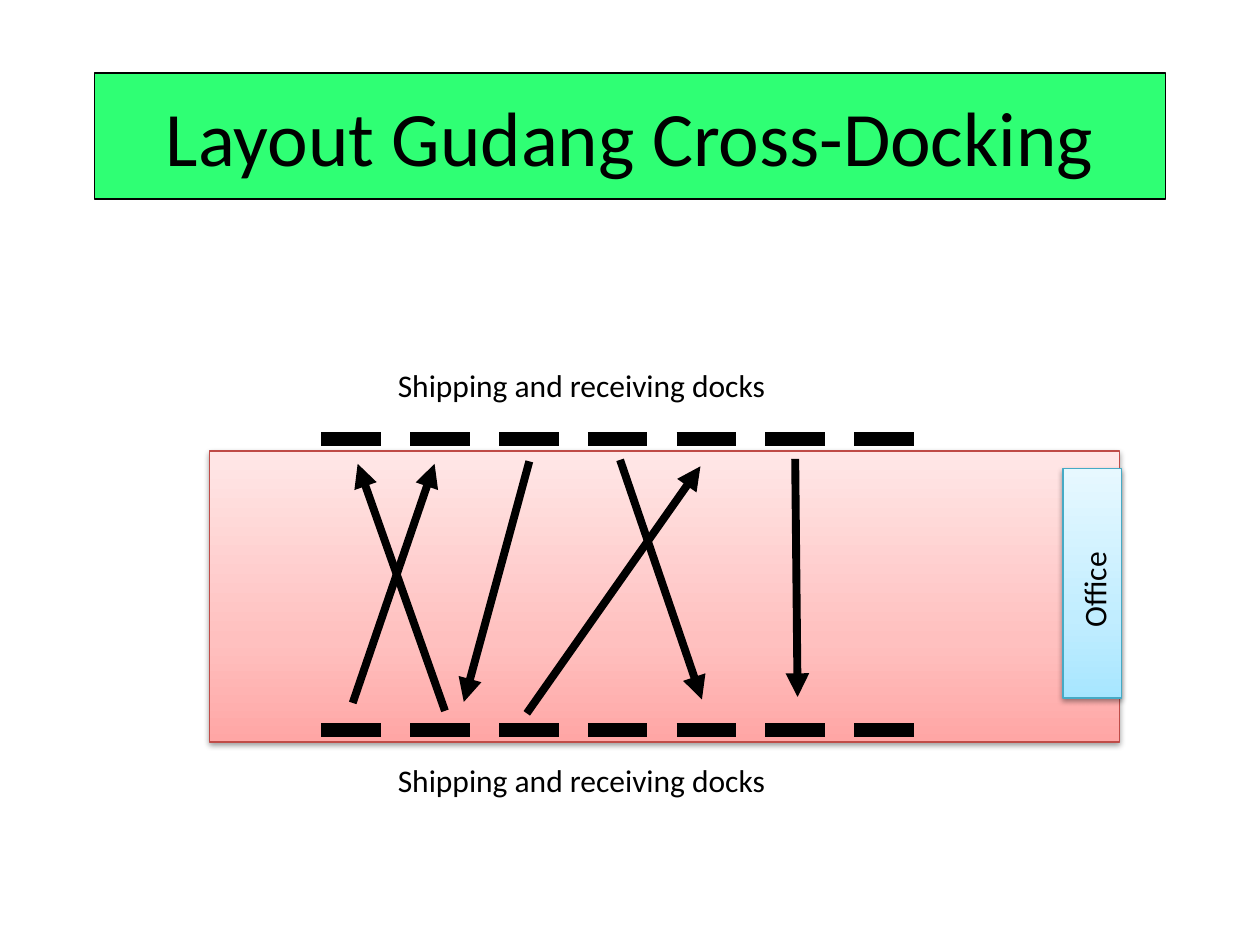
"""Draw the cross-docking warehouse layout slide."""
from lxml import etree
from pptx import Presentation
from pptx import util as u
from pptx.dml.color import RGBColor
from pptx.enum import shapes, text
from pptx.oxml import parse_xml
from pptx.oxml.ns import qn

FONT = "Calibri"
INK = "000000"
TITLE = ("Layout Gudang Cross-Docking", (1.9, 1.47, 21.6, 2.54), "2FFF74")
AREAS = [
    ((4.23, 9.09, 18.34, 5.87), "BF4C48", ("FFA6A5", "FFC0BF", "FFE7E7")),
    ((21.43, 9.45, 1.18, 4.62), "46AAC5", ("A7E6FF", "C1EDFF", "E7F8FF")),
]
STOPS = (0, 35, 100)
LABELS = [
    ("Shipping and receiving docks", (7.77, 7.26, 9.5, 1.02), 0),
    ("Shipping and receiving docks", (7.77, 15.21, 9.5, 1.02), 0),
    ("Office", (20.9, 11.23, 2.31, 1.02), 270),
]
DOCKS = {"rows": (8.84, 14.71), "count": 7, "left": 6.48, "step": 1.79, "long": 1.2}
FLOWS = [
    ((7.11, 14.17), (8.76, 9.35)),
    ((8.97, 14.33), (7.21, 9.35)),
    ((10.62, 14.38), (14.12, 9.4)),
    ((16.03, 9.25), (16.08, 14.05)),
    ((12.5, 9.27), (14.15, 14.1)),
    ((10.67, 9.3), (9.35, 14.15)),
]


def cms(nums):
    return [u.Cm(n) for n in nums]


def tint(part, code):
    part.solid()
    part.fore_color.rgb = RGBColor.from_string(code)


def edge(shape, code, width):
    tint(shape.line.fill, code)
    shape.line.width = u.Pt(width)


def write(shape, words, size, align):
    frame = shape.text_frame
    frame.text = words
    frame.word_wrap = True
    para = frame.paragraphs[0]
    para.alignment = align
    font = para.runs[0].font
    font.name, font.size = FONT, u.Pt(size)
    tint(font.fill, INK)
    return frame


def shade(shape, codes):
    shape.fill.gradient()
    grad = shape._element.spPr.find(qn("a:gradFill"))
    stops = grad.find(qn("a:gsLst"))
    for old in list(stops):
        stops.remove(old)
    for pos, code in zip(STOPS, codes):
        stop = etree.SubElement(stops, qn("a:gs"), pos=str(pos * 1000))
        etree.SubElement(stop, qn("a:srgbClr"), val=code)
    shape.fill.gradient_angle = 90


def lift(shape):
    shape.shadow.inherit = False
    effect = shape._element.spPr.find(qn("a:effectLst"))
    effect.append(parse_xml(
        '<a:outerShdw xmlns:a="http://schemas.openxmlformats.org/drawingml/2006/main"'
        ' blurRad="40000" dist="20000" dir="5400000" rotWithShape="0">'
        f'<a:srgbClr val="{INK}"><a:alpha val="38000"/></a:srgbClr></a:outerShdw>'))


def stroke(slide, start, end, width, head=False):
    line = slide.shapes.add_connector(
        shapes.MSO_CONNECTOR.STRAIGHT, *cms(start + end))
    edge(line, INK, width)
    if head:
        etree.SubElement(line.line._get_or_add_ln(), qn("a:tailEnd"), type="triangle")
    etree.SubElement(line._element.spPr, qn("a:effectLst"))


def main():
    deck = Presentation()
    deck.slide_width, deck.slide_height = cms((25.4, 19.05))
    slide = deck.slides.add_slide(deck.slide_layouts[5])

    words, box, code = TITLE
    title = slide.shapes.title
    title.left, title.top, title.width, title.height = cms(box)
    tint(title.fill, code)
    edge(title, INK, 0.75)
    frame = write(title, words, 44, text.PP_ALIGN.CENTER)
    frame.vertical_anchor = text.MSO_ANCHOR.MIDDLE

    for box, rim, codes in AREAS:
        area = slide.shapes.add_shape(shapes.MSO_SHAPE.RECTANGLE, *cms(box))
        shade(area, codes)
        edge(area, rim, 0.75)
        lift(area)

    for y in DOCKS["rows"]:
        for i in range(DOCKS["count"]):
            x = DOCKS["left"] + i * DOCKS["step"]
            stroke(slide, (x, y), (x + DOCKS["long"], y), 8)

    for words, box, turn in LABELS:
        label = slide.shapes.add_textbox(*cms(box))
        label.rotation = turn
        write(label, words, 18, text.PP_ALIGN.LEFT)

    for start, end in FLOWS:
        stroke(slide, start, end, 4.5, head=True)

    deck.save("out.pptx")


if __name__ == "__main__":
    main()
